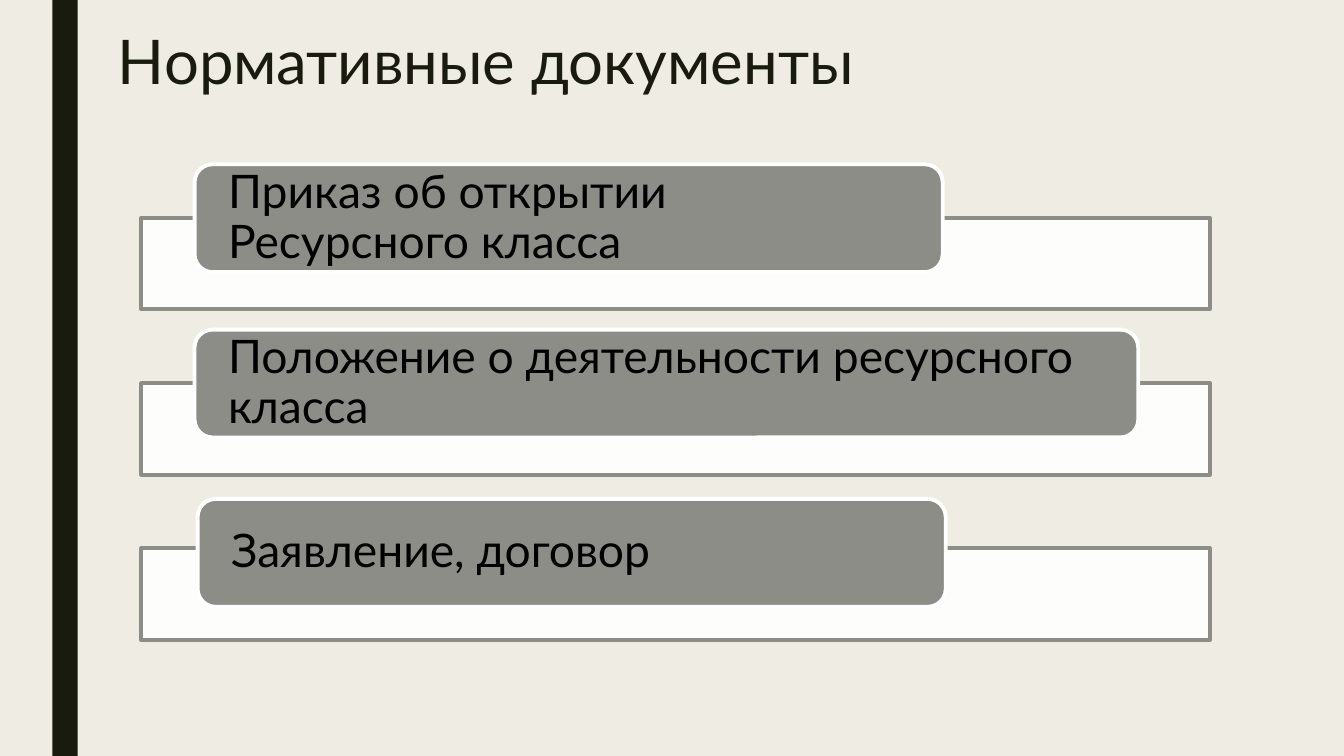
from dataclasses import dataclass

from lxml.etree import SubElement
from pptx import Presentation
from pptx.dml.color import RGBColor
from pptx.enum.shapes import MSO_SHAPE
from pptx.enum.text import MSO_ANCHOR, MSO_AUTO_SIZE, PP_ALIGN
from pptx.oxml.ns import qn
from pptx.util import Inches, Pt


@dataclass(frozen=True)
class Theme:
    font: str = "Lato"
    background: str = "EFEDE3"
    dark: str = "191B0E"
    gray: str = "8C8D86"
    white: str = "FFFFFF"
    black: str = "000000"
    title_size: float = 44
    label_size: float = 33
    outline: float = 2.75


THEME = Theme()

# Label text, left, top and width of each label
DOCUMENTS = [
    ("Приказ об открытии Ресурсного класса", 1.93, 1.63, 7.42),
    ("Положение о деятельности ресурсного класса", 1.93, 3.27, 9.36),
    ("Заявление, договор", 1.96, 4.95, 7.42),
]
PANEL_TOP, PANEL_STEP = 2.16, 1.64


def color(value):
    return RGBColor.from_string(value)


def write_text(frame, text, *, size, ink, anchor, spacing=0.9, margins=(0.1, 0.05)):
    frame.word_wrap = True
    frame.auto_size = MSO_AUTO_SIZE.NONE
    frame.vertical_anchor = anchor
    frame.margin_left = frame.margin_right = Inches(margins[0])
    frame.margin_top = frame.margin_bottom = Inches(margins[1])
    para = frame.paragraphs[0]
    para.alignment = PP_ALIGN.LEFT
    para.line_spacing = spacing
    span = para.add_run()
    span.text = text
    span.font.name = THEME.font
    span.font.size = Pt(size)
    span.font.color.rgb = color(ink)


def add_box(page, kind, left, top, width, height, *, fill, line=None, opacity=100):
    box = page.shapes.add_shape(
        kind, Inches(left), Inches(top), Inches(width), Inches(height))
    box.shadow.inherit = False
    box.fill.solid()
    box.fill.fore_color.rgb = color(fill)
    if opacity < 100:
        shade = box.fill._xPr.find(qn("a:solidFill"))[0]
        SubElement(shade, qn("a:alpha")).set("val", str(opacity * 1000))
    if line:
        box.line.color.rgb = color(line)
        box.line.width = Pt(THEME.outline)
    else:
        box.line.fill.background()
    return box


def add_title(page, text):
    title = page.shapes.title
    title.left, title.top = Inches(1.07), Inches(0.27)
    title.width, title.height = Inches(10.5), Inches(1.62)
    write_text(title.text_frame, text, size=THEME.title_size, ink=THEME.dark,
               anchor=MSO_ANCHOR.TOP, spacing=0.89)


def add_document(page, index, text, left, top, width):
    add_box(page, MSO_SHAPE.RECTANGLE, 1.4, PANEL_TOP + index * PANEL_STEP, 10.6, 0.91,
            fill=THEME.white, line=THEME.gray, opacity=90)
    label = add_box(page, MSO_SHAPE.ROUNDED_RECTANGLE, left, top, width, 1.07,
                    fill=THEME.gray, line=THEME.white)
    write_text(label.text_frame, text, size=THEME.label_size, ink=THEME.black,
               anchor=MSO_ANCHOR.MIDDLE, margins=(0.28, 0))


def main():
    deck = Presentation()
    deck.slide_width, deck.slide_height = Inches(13.33), Inches(7.5)
    page = deck.slides.add_slide(deck.slide_layouts[5])

    # Background and side stripe
    page.background.fill.solid()
    page.background.fill.fore_color.rgb = color(THEME.background)
    add_box(page, MSO_SHAPE.RECTANGLE, 0.52, 0, 0.25, 7.5, fill=THEME.dark)

    # Title and list of documents
    add_title(page, "Нормативные документы")
    for index, document in enumerate(DOCUMENTS):
        add_document(page, index, *document)

    deck.save("out.pptx")


if __name__ == "__main__":
    main()
